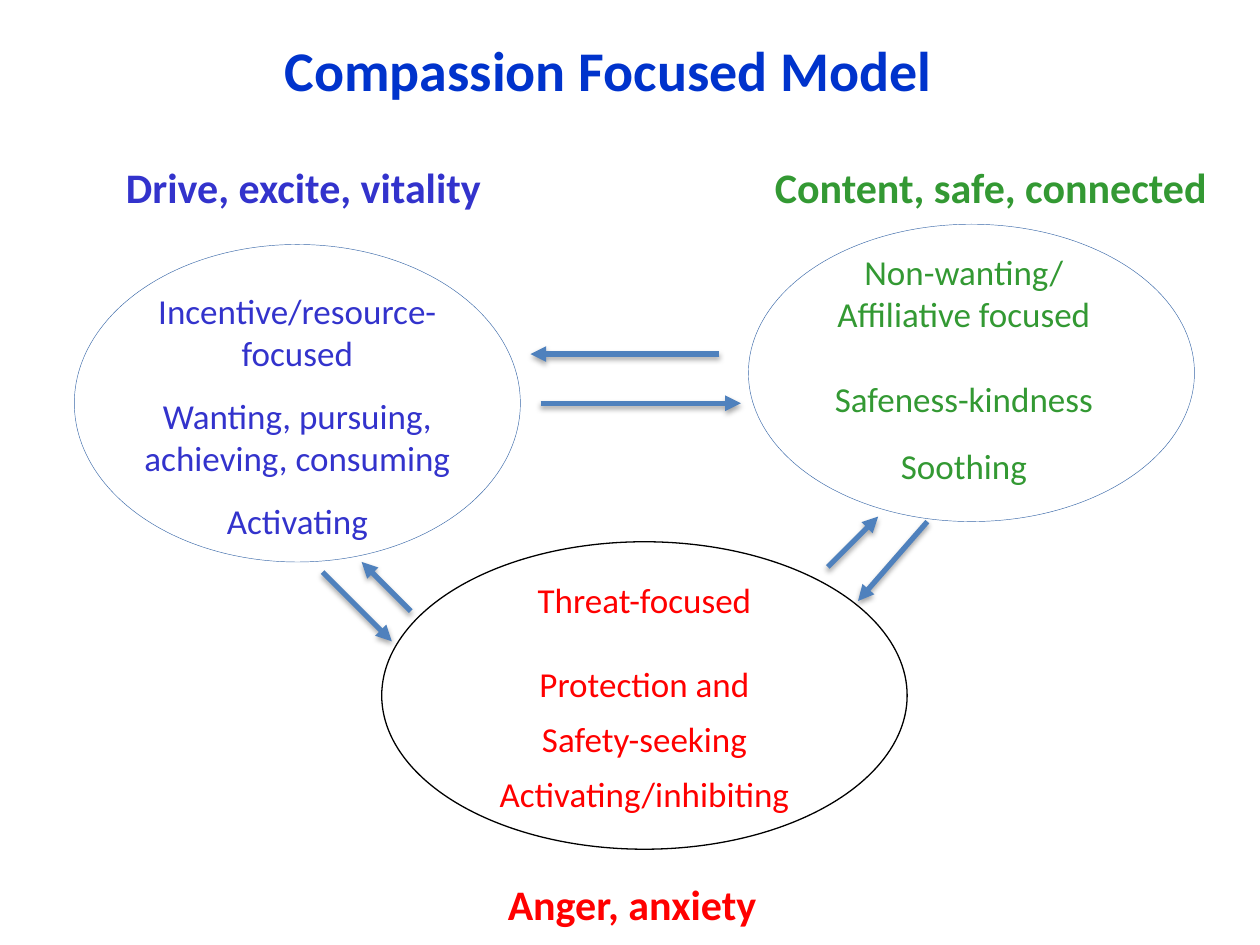
from lxml import etree
from pptx import Presentation
from pptx import util as u
from pptx.dml.color import RGBColor
from pptx.enum import shapes, text
from pptx.oxml import ns

COLORS = {
    "title": "0033CC",
    "drive": "3333CC",
    "content": "339933",
    "threat": "FF0000",
    "arrow": "4F81BD",
    "thin_outline": "3A68A8",
    "black": "000000",
    "white": "FFFFFF",
}
BLANK_LINE = 24.4
HALF_LINE = 14.6


def rgb(name):
    return RGBColor.from_string(COLORS[name])


def add_oval(page, place, line, width):
    oval = page.shapes.add_shape(shapes.MSO_SHAPE.OVAL, *map(u.Inches, place))
    oval.shadow.inherit = False
    oval.fill.solid()
    oval.fill.fore_color.rgb = rgb("white")
    oval.line.color.rgb = rgb(line)
    oval.line.width = u.Pt(width)


def add_text(page, place, paragraphs, color, size=20, bold=False, centred=False,
             inset=(0.05, 0.05), wrap=True, middle=False):
    box = page.shapes.add_textbox(*map(u.Inches, place))
    frame = box.text_frame
    frame.word_wrap = wrap
    frame.margin_left = frame.margin_right = u.Inches(inset[0])
    frame.margin_top = frame.margin_bottom = u.Inches(inset[1])
    frame.vertical_anchor = text.MSO_ANCHOR.MIDDLE if middle else text.MSO_ANCHOR.TOP
    for index, (words, before, spacing) in enumerate(paragraphs):
        para = frame.paragraphs[0] if index == 0 else frame.add_paragraph()
        para.alignment = text.PP_ALIGN.CENTER if centred else text.PP_ALIGN.LEFT
        para.space_before = u.Pt(before)
        para.line_spacing = spacing
        span = para.add_run()
        span.text = words
        span.font.name = "Calibri"
        span.font.size = u.Pt(size)
        span.font.bold = bold
        span.font.color.rgb = rgb(color)


def add_arrow(page, start, end):
    arrow = page.shapes.add_connector(
        shapes.MSO_CONNECTOR.STRAIGHT, *map(u.Inches, start + end))
    arrow.line.color.rgb = rgb("arrow")
    arrow.line.width = u.Pt(3)
    etree.SubElement(arrow.line._get_or_add_ln(), ns.qn("a:tailEnd"), type="triangle")
    properties = arrow._element.spPr
    effects = etree.SubElement(properties, ns.qn("a:effectLst"))
    shadow = etree.SubElement(
        effects, ns.qn("a:outerShdw"), blurRad=str(u.Pt(3.1)), dist=str(u.Pt(1.8)),
        dir="5400000", rotWithShape="0")
    shade = etree.SubElement(shadow, ns.qn("a:srgbClr"), val=COLORS["black"])
    etree.SubElement(shade, ns.qn("a:alpha"), val="35000")


def main():
    deck = Presentation()
    deck.slide_width, deck.slide_height = u.Inches(10), u.Inches(7.5)
    page = deck.slides.add_slide(deck.slide_layouts[6])

    add_oval(page, (0.59, 1.94, 3.54, 2.52), "thin_outline", 0.25)
    add_oval(page, (5.94, 1.78, 3.54, 2.36), "thin_outline", 0.25)
    add_oval(page, (3.03, 4.3, 4.17, 2.44), "black", 0.75)

    add_text(page, (0.9, 2.25, 2.92, 2.02), [
        ("Incentive/resource- focused", 0, 1),
        ("Wanting, pursuing, achieving, consuming", 12, 1),
        ("Activating", 12, 1),
    ], "drive", centred=True)
    add_text(page, (6.1, 1.94, 3.1, 1.89), [
        ("Non-wanting/", 0, 1),
        ("Affiliative focused", 0, 1),
        ("Safeness-kindness", BLANK_LINE, 1),
        ("Soothing", HALF_LINE, 1),
    ], "content", centred=True)
    add_text(page, (3.95, 4.6, 2.33, 1.85), [
        ("Threat-focused", 0, 1),
        ("Protection and", BLANK_LINE, 1),
        ("Safety-seeking", 0, 1.3),
        ("Activating/inhibiting", 0, 1.3),
    ], "threat", centred=True, inset=(0, 0), wrap=False, middle=True)

    for start, end in (
        ((4.29, 3.2), (5.88, 3.2)),
        ((5.71, 2.81), (4.21, 2.81)),
        ((2.56, 4.54), (3.11, 5.09)),
        ((3.26, 4.85), (2.87, 4.46)),
        ((7.36, 4.14), (6.81, 4.77)),
        ((6.57, 4.5), (6.97, 4.1)),
    ):
        add_arrow(page, start, end)

    for words, place, color in (
        ("Anger, anxiety", (3.98, 6.92, 2.22, 0.5), "threat"),
        ("Drive, excite, vitality", (0.95, 1.23, 3.23, 0.5), "drive"),
        ("Content, safe, connected", (6.1, 1.23, 3.9, 0.5), "content"),
    ):
        add_text(page, place, [(words, 0, 1)], color, size=24, bold=True)
    add_text(page, (2.16, 0.23, 5.39, 0.64), [("Compassion Focused Model", 0, 1)],
             "title", size=32, bold=True, inset=(0.1, 0.05), wrap=False)

    deck.save("out.pptx")


if __name__ == "__main__":
    main()
